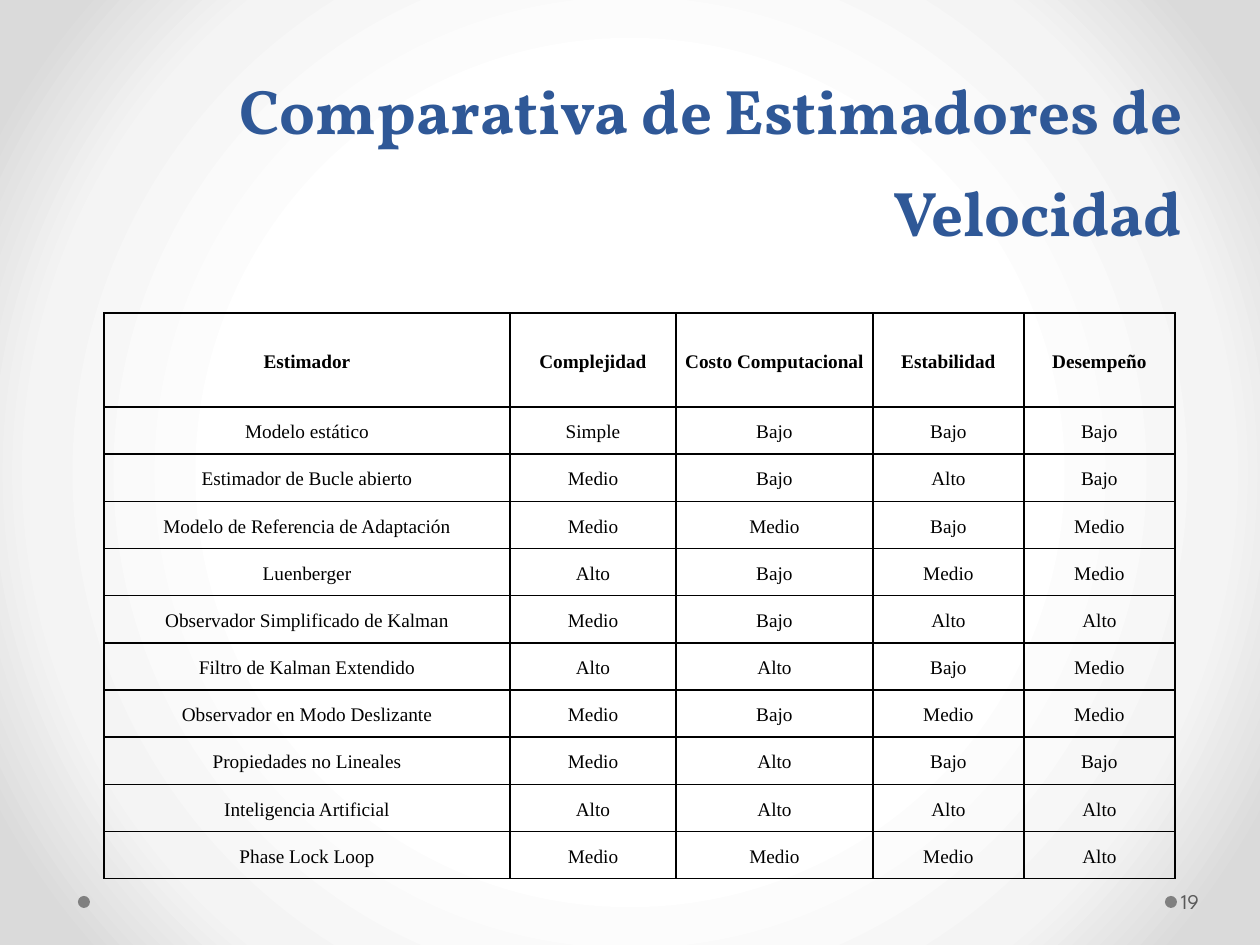
from pptx import Presentation
from pptx.dml.color import RGBColor
from pptx.enum.shapes import MSO_SHAPE
from pptx.enum.text import MSO_ANCHOR, MSO_AUTO_SIZE, PP_ALIGN
from pptx.oxml import parse_xml
from pptx.oxml.ns import nsdecls
from pptx.util import Pt

LEFT, MID, RIGHT = PP_ALIGN.LEFT, PP_ALIGN.CENTER, PP_ALIGN.RIGHT
CENTER, BOTTOM = MSO_ANCHOR.MIDDLE, MSO_ANCHOR.BOTTOM
OVAL = MSO_SHAPE.OVAL
SCALE = 914400 / 126

THEME = {
    "title": {"font": "Vollkorn", "size": 36, "color": "2F5897", "bold": True},
    "body": {"font": "Times New Roman", "size": 11, "color": "000000"},
    "page": {"font": "League Spartan", "size": 12, "color": "595959"},
    "dot": "808080",
    "line": "000000",
    "back": [(0, "FFFFFF"), (50, "FFFFFF"), (76, "F4F4F4"),
             (92, "DADADA"), (100, "DADADA")],
}


def px(n):
    return round(n * SCALE)


def write(frame, text, font, size, color, bold=False, align=LEFT, space=None):
    frame.word_wrap = True
    para = frame.paragraphs[0]
    para.alignment = align
    if space:
        para.line_spacing = space
    run = para.add_run()
    run.text = text
    run.font.name = font
    run.font.size = Pt(size)
    run.font.bold = bold
    run.font.color.rgb = RGBColor.from_string(color)


deck = Presentation()
deck.slide_width, deck.slide_height = px(1260), px(945)
slide = deck.slides.add_slide(deck.slide_layouts[5])
shapes = slide.shapes

# Radial background
stops = "".join(
    f'<a:gs pos="{pos * 1000}"><a:srgbClr val="{color}"/></a:gs>'
    for pos, color in THEME["back"])
slide.element.cSld.insert(0, parse_xml(
    f'<p:bg {nsdecls("p", "a")}><p:bgPr><a:gradFill rotWithShape="1">'
    f'<a:gsLst>{stops}</a:gsLst><a:path path="circle">'
    '<a:fillToRect l="50000" t="50000" r="50000" b="50000"/></a:path>'
    '</a:gradFill><a:effectLst/></p:bgPr></p:bg>'))

# Footer dots
for left in (1165, 78):
    dot = shapes.add_shape(OVAL, px(left), px(896), px(12), px(12))
    dot.shadow.inherit = False
    dot.fill.solid()
    dot.fill.fore_color.rgb = RGBColor.from_string(THEME["dot"])
    dot.line.fill.background()

# Title
title = shapes.title
title.left, title.top, title.width, title.height = (
    px(84), px(145), px(1111), px(110))
title.text_frame.auto_size = MSO_AUTO_SIZE.NONE
title.text_frame.vertical_anchor = BOTTOM
write(title.text_frame, "Comparativa de Estimadores de Velocidad",
      align=RIGHT, space=Pt(58), **THEME["title"])

# Page number
page = shapes.add_textbox(px(1177), px(876), px(77), px(50)).text_frame
page.vertical_anchor = CENTER
page.margin_left = px(4)
page.margin_right = px(6)
write(page, "19", **THEME["page"])

# Comparison table
ROWS = [
    ("Estimador", "Complejidad", "Costo Computacional", "Estabilidad", "Desempeño"),
    ("Modelo estático", "Simple", "Bajo", "Bajo", "Bajo"),
    ("Estimador de Bucle abierto", "Medio", "Bajo", "Alto", "Bajo"),
    ("Modelo de Referencia de Adaptación", "Medio", "Medio", "Bajo", "Medio"),
    ("Luenberger", "Alto", "Bajo", "Medio", "Medio"),
    ("Observador Simplificado de Kalman", "Medio", "Bajo", "Alto", "Alto"),
    ("Filtro de Kalman Extendido", "Alto", "Alto", "Bajo", "Medio"),
    ("Observador en Modo Deslizante", "Medio", "Bajo", "Medio", "Medio"),
    ("Propiedades no Lineales", "Medio", "Alto", "Bajo", "Bajo"),
    ("Inteligencia Artificial", "Alto", "Alto", "Alto", "Alto"),
    ("Phase Lock Loop", "Medio", "Medio", "Medio", "Alto"),
]
WIDTHS = [406, 166, 197, 151, 151]
HEAD, BODY = 94, 472

grid = shapes.add_table(len(ROWS), len(WIDTHS), px(104), px(313),
                        px(sum(WIDTHS)), px(HEAD + BODY)).table
grid.first_row = grid.horz_banding = False
for col, width in zip(grid.columns, WIDTHS):
    col.width = px(width)

for r, row in enumerate(ROWS):
    grid.rows[r].height = px(BODY) // (len(ROWS) - 1) if r else px(HEAD)
    for c, text in enumerate(row):
        cell = grid.cell(r, c)
        cell.vertical_anchor = CENTER
        cell.margin_left = cell.margin_right = px(9)
        cell.margin_top = cell.margin_bottom = 0
        write(cell.text_frame, text, bold=r == 0, align=MID, space=1.15,
              **THEME["body"])
        # Borders come before the fill in the cell properties
        for side in "LRTB":
            cell._tc.get_or_add_tcPr().append(parse_xml(
                f'<a:ln{side} {nsdecls("a")} w="{Pt(1)}"><a:solidFill>'
                f'<a:srgbClr val="{THEME["line"]}"/></a:solidFill></a:ln{side}>'))
        cell.fill.background()

deck.save("out.pptx")
